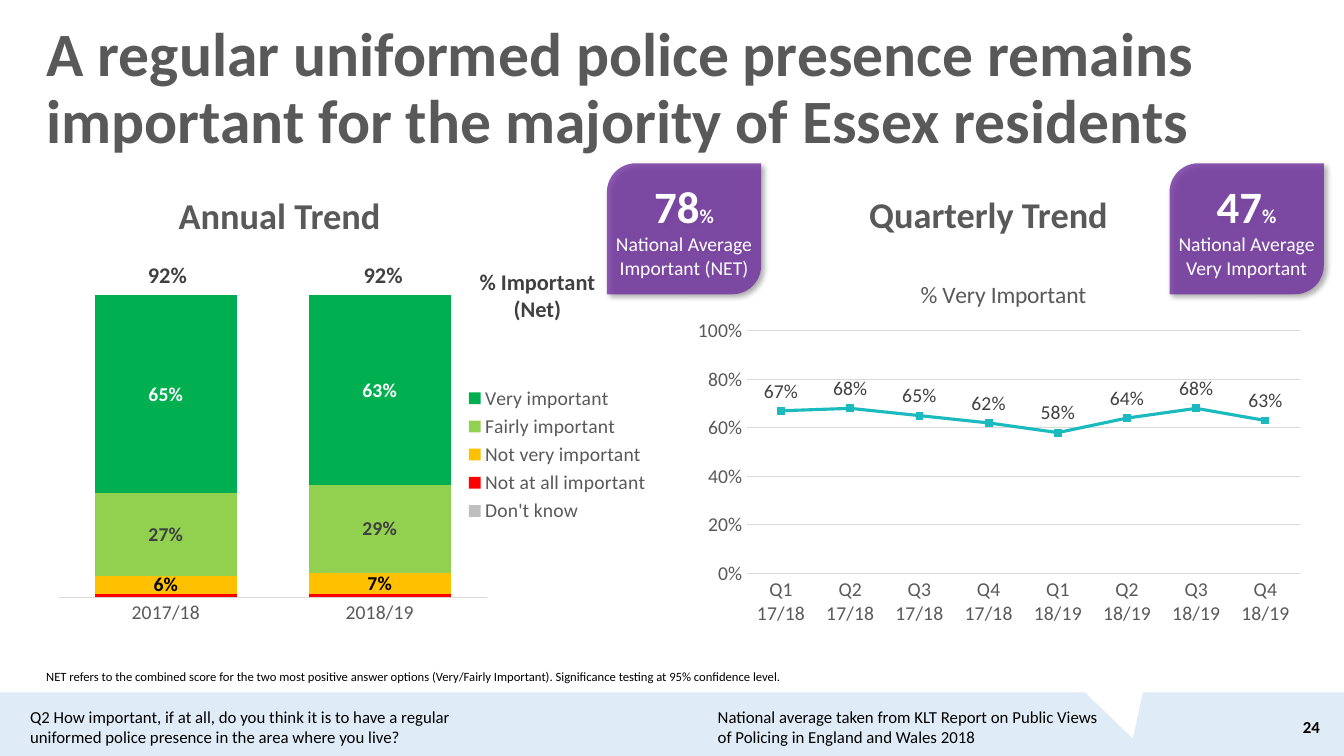
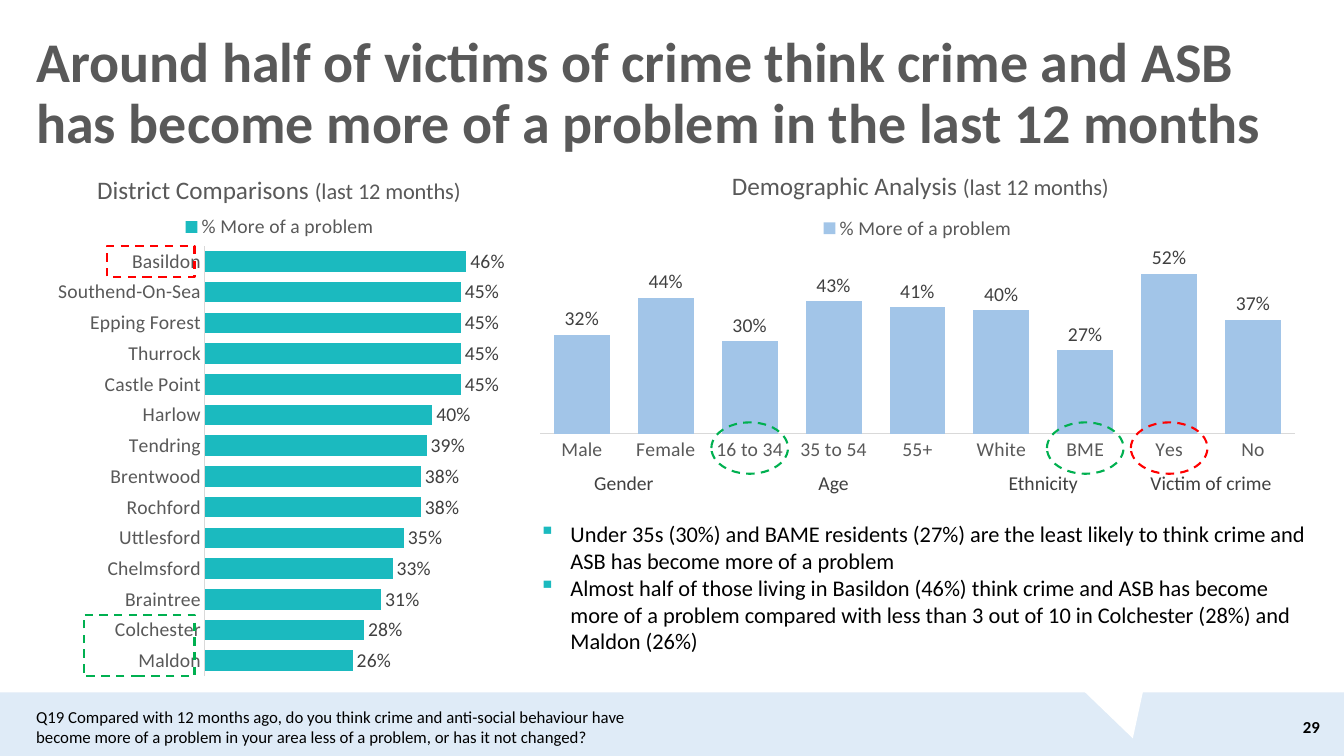
from lxml import etree
from pptx import Presentation
from pptx.chart.data import CategoryChartData
from pptx.dml.color import RGBColor
from pptx.enum.chart import XL_CHART_TYPE as CT, XL_LABEL_POSITION as LP
from pptx.enum.chart import XL_LEGEND_POSITION as LEG, XL_MARKER_STYLE as MARKER
from pptx.enum.chart import XL_TICK_MARK as TICK
from pptx.enum.dml import MSO_LINE
from pptx.enum.shapes import MSO_SHAPE as SHAPE
from pptx.enum.text import MSO_ANCHOR as ANCHOR, MSO_AUTO_SIZE as AUTO, PP_ALIGN as ALIGN
from pptx.oxml import parse_xml
from pptx.oxml.ns import nsdecls, qn
from pptx.util import Inches, Pt

FONT = "Calibri"
BLACK, WHITE, GREY, DARK, RULE = "000000", "FFFFFF", "595959", "404040", "D9D9D9"
TEAL, BLUE, BAND, PURPLE = "1BBABF", "A2C5E8", "DFEBF7", "7030A0"
RED, AMBER, LIME, GREEN, SILVER = "FF0000", "FFC000", "92D050", "00B050", "BFBFBF"
PLAIN_TABLE = "{2D5ABB26-0587-4C30-8999-92F81FD0307C}"


def rgb(color):
    return RGBColor.from_string(color)


def inches(box):
    return [Inches(v) for v in box]


def style(font, size, color=BLACK, bold=False):
    font.name, font.size, font.bold = FONT, Pt(size), bold
    font.color.rgb = rgb(color)


def add_text(s, box, lines, size, color=BLACK, bold=False, align=ALIGN.LEFT,
             anchor=ANCHOR.TOP, spacing=None, wrap=True):
    tf = s.shapes.add_textbox(*inches(box)).text_frame
    tf.word_wrap, tf.vertical_anchor = wrap, anchor
    for i, line in enumerate(lines):
        p = tf.add_paragraph() if i else tf.paragraphs[0]
        p.text, p.alignment, p.line_spacing = line, align, spacing
        style(p.font, size, color, bold)
    return tf


def add_shape(s, kind, box, fill=None, dash=None):
    sp = s.shapes.add_shape(kind, *inches(box))
    if fill:
        sp.fill.solid()
        sp.fill.fore_color.rgb = rgb(fill)
    else:
        sp.fill.background()
    if dash:
        sp.line.color.rgb = rgb(dash)
        sp.line.width, sp.line.dash_style = Pt(1.5), MSO_LINE.DASH
    else:
        sp.line.fill.background()
    sp.shadow.inherit = False
    return sp


def add_row(s, box, widths, texts, size, bold=False):
    frame = s.shapes.add_table(1, len(texts), *inches(box))
    frame.element.xpath(".//a:tableStyleId")[0].text = PLAIN_TABLE
    table = frame.table
    table.first_row = table.horz_banding = False
    for col, width in zip(table.columns, widths):
        col.width = Inches(width)
    for cell, text in zip(table.rows[0].cells, texts):
        cell.fill.background()
        cell.vertical_anchor = ANCHOR.MIDDLE
        p = cell.text_frame.paragraphs[0]
        p.text, p.alignment = text, ALIGN.CENTER
        style(p.font, size, DARK, bold)


def set_layout(parent, after, x, y, w=None, h=None, inner=False):
    for old in parent.findall(qn("c:layout")):
        parent.remove(old)
    layout = etree.Element(qn("c:layout"))
    manual = etree.SubElement(layout, qn("c:manualLayout"))
    values = [("layoutTarget", "inner")] if inner else []
    values += [("xMode", "edge"), ("yMode", "edge"), ("x", x), ("y", y), ("w", w), ("h", h)]
    for tag, value in values:
        if value is not None:
            etree.SubElement(manual, qn("c:" + tag)).set("val", str(value))
    if after is None:
        parent.insert(0, layout)
    else:
        parent.find(qn("c:" + after)).addnext(layout)


def add_chart(s, kind, box, cats, series, plot_box, label_pos, gap=None, overlap=None):
    data = CategoryChartData(number_format="0%")
    data.categories = cats
    for name, values, *_ in series:
        data.add_series(name, values)
    chart = s.shapes.add_chart(kind, *inches(box), data).chart
    style(chart.font, 14)
    chart.has_title = chart.has_legend = False
    plot, cat, val = chart.plots[0], chart.category_axis, chart.value_axis
    plot.vary_by_categories = False
    if gap is not None:
        plot.gap_width = gap
    if overlap is not None:
        plot.overlap = overlap
    style(cat.tick_labels.font, 14, GREY)
    cat.major_tick_mark = val.major_tick_mark = TICK.NONE
    cat.format.line.color.rgb = rgb(RULE)
    cat.format.line.width = Pt(0.75)
    val.minimum_scale, val.has_major_gridlines, val.visible = 0, False, False
    for ser, (_, _, color, label_color, bold) in zip(plot.series, series):
        if kind == CT.LINE_MARKERS:
            ser.smooth = False
            ser.format.line.color.rgb = rgb(color)
            ser.format.line.width = Pt(2.25)
            ser.marker.style, ser.marker.size = MARKER.SQUARE, 5
            fills = [ser.marker.format.fill, ser.marker.format.line.fill]
        else:
            ser.invert_if_negative = False
            fills = [ser.format.fill]
        for fill in fills:
            fill.solid()
            fill.fore_color.rgb = rgb(color)
        if label_color:
            labels = ser.data_labels
            labels.show_value, labels.position = True, label_pos
            labels.number_format, labels.number_format_is_linked = "0%", False
            style(labels.font, 14, label_color, bold)
    set_layout(chart.element.find(".//" + qn("c:plotArea")), None, *plot_box, inner=True)
    return chart


def add_chart_title(chart, runs, x, y):
    p = chart.chart_title.text_frame.paragraphs[0]
    for text, size in runs:
        r = p.add_run()
        r.text = text
        style(r.font, size, GREY)
    title = chart.element.find(".//" + qn("c:title"))
    set_layout(title, "tx", x, y)
    chart.chart_title.include_in_layout = False


def add_legend(chart, position, layout=None):
    chart.has_legend = True
    chart.legend.position, chart.legend.include_in_layout = position, False
    style(chart.legend.font, 14, GREY)
    if layout:
        set_layout(chart.element.find(".//" + qn("c:legend")), "legendPos", *layout)


def add_badge(s, box, number, caption):
    sp = add_shape(s, SHAPE.ROUND_2_DIAG_RECTANGLE, box, PURPLE)
    sp.adjustments[0], sp.adjustments[1] = 0.22, 0
    color = sp.element.spPr.find(qn("a:solidFill"))[0]
    etree.SubElement(color, qn("a:alpha")).set("val", "80000")
    sp.element.spPr.find(qn("a:effectLst")).append(parse_xml(
        f'<a:outerShdw {nsdecls("a")} blurRad="50800" dist="38100" dir="2700000" algn="tl" '
        'rotWithShape="0"><a:srgbClr val="000000"><a:alpha val="40000"/></a:srgbClr></a:outerShdw>'))
    tf = sp.text_frame
    tf.margin_left = tf.margin_right = tf.margin_top = tf.margin_bottom = 0
    tf.word_wrap, tf.vertical_anchor = True, ANCHOR.MIDDLE
    for i, line in enumerate([number, "National Average", caption]):
        p = tf.add_paragraph() if i else tf.paragraphs[0]
        p.alignment = ALIGN.CENTER
        style(p.font, 14, WHITE, i == 0)
        r = p.add_run()
        r.text = line
        if i == 0:
            r.font.size = Pt(32)
            p.add_run().text = "%"


def add_footer_band(s):
    band = add_shape(s, SHAPE.RECTANGLE, (0, 6.87, 13.33, 0.63), BAND)
    notch = add_shape(s, SHAPE.ISOSCELES_TRIANGLE, (10.75, 6.65, 0.77, 0.69), WHITE)
    notch.rotation = 163.1
    for i, sp in enumerate((band, notch)):
        s.slide_layout.shapes.element.insert(2 + i, sp.element)


def add_slide(prs, title, box, size, number, notes):
    s = prs.slides.add_slide(prs.slide_layouts[5])
    if len(prs.slides) == 1:
        add_footer_band(s)
    sp = s.shapes.title
    sp.left, sp.top, sp.width, sp.height = inches(box)
    tf = sp.text_frame
    tf.text = title
    tf.auto_size, tf.word_wrap, tf.vertical_anchor = AUTO.NONE, True, ANCHOR.MIDDLE
    p = tf.paragraphs[0]
    p.alignment, p.line_spacing = ALIGN.LEFT, 0.9
    style(p.font, size, GREY, True)
    add_text(s, (12.62, 7.01, 0.57, 0.4), [number], 12, bold=True,
             align=ALIGN.RIGHT, anchor=ANCHOR.MIDDLE)
    for x, width, note in notes:
        add_text(s, (x, 6.96, width, 0.5), [note], 12)
    return s


def annual_panel(s, x, y):
    add_text(s, (x + 0.42, y, 3.91, 0.77), ["Annual Trend"], 26, GREY, True,
             ALIGN.CENTER, ANCHOR.MIDDLE, 0.9)
    series = [("Don't know", (0, 0), SILVER, None, False),
              ("Not at all important", (0.01, 0.01), RED, None, False),
              ("Not very important", (0.06, 0.07), AMBER, BLACK, True),
              ("Fairly important", (0.27, 0.29), LIME, DARK, True),
              ("Very important", (0.65, 0.63), GREEN, WHITE, True)]
    chart = add_chart(s, CT.COLUMN_STACKED_100, (x, y + 0.65, 6.15, 4.16),
                      ("2017/18", "2018/19"), series, (0.03, 0.12, 0.69, 0.72),
                      LP.CENTER, 50, 100)
    add_legend(chart, LEG.RIGHT)
    add_row(s, (x + 0.19, y + 0.75, 4.28, 0.41), [2.14] * 2, ["92%"] * 2, 16, True)
    add_text(s, (x + 4.25, y + 0.83, 1.36, 0.64), ["% Important", "(Net)"], 16, DARK, True,
             ALIGN.CENTER, wrap=False)
    add_badge(s, (x + 5.62, y - 0.16, 1.53, 1.3), "78", "Important (NET)")


def quarterly_panel(s, x, y):
    add_text(s, (x, y, 6.13, 0.46), ["Quarterly Trend"], 25.9, GREY, True,
             ALIGN.CENTER, ANCHOR.MIDDLE, 0.8)
    quarters = [f"Q{q}\n{year}" for year in ("17/18", "18/19") for q in range(1, 5)]
    values = (0.67, 0.68, 0.65, 0.62, 0.58, 0.64, 0.68, 0.63)
    name = "% Very Important"
    chart = add_chart(s, CT.LINE_MARKERS, (x + 0.04, y + 0.6, 6.24, 3.76), quarters,
                      [(name, values, TEAL, DARK, False)], (0.1, 0.2, 0.88, 0.64), LP.ABOVE)
    add_chart_title(chart, [(name, 16.8)], 0.37, 0.05)
    val = chart.value_axis
    val.visible, val.maximum_scale, val.major_unit = True, 1, 0.2
    val.has_major_gridlines = True
    val.major_gridlines.format.line.color.rgb = rgb(RULE)
    val.major_gridlines.format.line.width = Pt(0.75)
    val.format.line.fill.background()
    val.tick_labels.number_format, val.tick_labels.number_format_is_linked = "0%", False
    style(val.tick_labels.font, 14, GREY)
    add_badge(s, (x + 4.86, y - 0.31, 1.53, 1.3), "47", "Very Important")


def district_panel(s, x, y, w, h):
    districts = {"Basildon": 0.46, "Southend-On-Sea": 0.45, "Epping Forest": 0.45,
                 "Thurrock": 0.45, "Castle Point": 0.45, "Harlow": 0.4, "Tendring": 0.39,
                 "Brentwood": 0.38, "Rochford": 0.38, "Uttlesford": 0.35, "Chelmsford": 0.33,
                 "Braintree": 0.31, "Colchester": 0.28, "Maldon": 0.26}
    chart = add_chart(s, CT.BAR_CLUSTERED, (x, y, w, h), list(districts),
                      [("% More of a problem", districts.values(), TEAL, DARK, False)],
                      (0.35, 0.18, 0.59, 0.79), LP.OUTSIDE_END, 50)
    chart.category_axis.reverse_order = True
    chart.value_axis.maximum_scale = 0.5
    add_chart_title(chart, [("District Comparisons ", 18), ("(last 12 months)", 16)], 0.12, 0.04)
    add_legend(chart, LEG.TOP, (0.29, 0.12, 0.43, 0.05))
    pitch = 0.79 * h / len(districts)
    for first, rows, left, color in ((0, 1, 0.7, RED), (12, 2, 0.47, GREEN)):
        add_shape(s, SHAPE.RECTANGLE,
                  (x + left, y + 0.18 * h + first * pitch, 1.57 - left, rows * pitch), dash=color)


def demographic_panel(s, x, y, w, h):
    people = {"Male": 0.32, "Female": 0.44, "16 to 34": 0.3, "35 to 54": 0.43, "55+": 0.41,
              "White": 0.4, "BME": 0.27, "Yes": 0.52, "No": 0.37}
    groups = {"Gender": 2, "Age": 3, "Ethnicity": 2, "Victim of crime": 2}
    chart = add_chart(s, CT.COLUMN_CLUSTERED, (x, y, w, h), list(people),
                      [("% More of a problem", people.values(), BLUE, DARK, False)],
                      (0.02, 0.31, 0.96, 0.58), LP.OUTSIDE_END, 50, -27)
    chart.value_axis.maximum_scale = 0.6
    add_chart_title(chart, [("Demographic Analysis ", 18), ("(last 12 months)", 16)], 0.26, 0.05)
    add_legend(chart, LEG.TOP, (0.37, 0.2, 0.26, 0.09))
    left, slot = x + 0.02 * w, 0.96 * w / len(people)
    add_row(s, (left, y + 3.11, 9 * slot, 0.39), [n * slot for n in groups.values()],
            list(groups), 14)
    for i, name in enumerate(people):
        if name in ("16 to 34", "BME", "Yes"):
            add_shape(s, SHAPE.OVAL, (left + (i + 0.5) * slot - 0.38, y + 2.7, 0.76, 0.51),
                      dash=RED if name == "Yes" else GREEN)


def findings(s, box, lines):
    for p in add_text(s, box, lines, 16).paragraphs:
        pPr = p._p.get_or_add_pPr()
        pPr.set("marL", str(Inches(0.31)))
        pPr.set("indent", str(-Inches(0.31)))
        for i, xml in enumerate((f'<a:buClr {nsdecls("a")}><a:srgbClr val="{TEAL}"/></a:buClr>',
                                 f'<a:buChar {nsdecls("a")} char="▪"/>')):
            pPr.insert(i, parse_xml(xml))


def main():
    prs = Presentation()
    prs.slide_width, prs.slide_height = Inches(13.33), Inches(7.5)
    s = add_slide(
        prs, "A regular uniformed police presence remains important for the majority of Essex residents",
        (0.36, 0.17, 12.63, 1.45), 44, "24",
        [(0.2, 4.41, "Q2 How important, if at all, do you think it is to have a regular uniformed police presence in the area where you live?"),
         (7.02, 4.02, "National average taken from KLT Report on Public Views of Policing in England and Wales 2018")])
    annual_panel(s, 0.4, 1.78)
    quarterly_panel(s, 6.74, 1.93)
    add_text(s, (0.36, 6.59, 7.55, 0.25), ["NET refers to the combined score for the two most positive answer options (Very/Fairly Important). Significance testing at 95% confidence level."], 9)
    s = add_slide(
        prs, "Around half of victims of crime think crime and ASB has become more of a problem in the last 12 months",
        (0.26, 0.17, 12.93, 1.54), 40, "29",
        [(0.26, 6.11, "Q19 Compared with 12 months ago, do you think crime and anti-social behaviour have become more of a problem in your area less of a problem, or has it not changed?")])
    demographic_panel(s, 5.2, 1.49, 7.8, 3.16)
    district_panel(s, 0.36, 1.47, 4.78, 5.4)
    findings(s, (5.25, 5.11, 7.94, 1.45), [
        "Under 35s (30%) and BAME residents (27%) are the least likely to think crime and ASB has become more of a problem",
        "Almost half of those living in Basildon (46%) think crime and ASB has become more of a problem compared with less than 3 out of 10 in Colchester (28%) and Maldon (26%)"])
    prs.save("out.pptx")


if __name__ == "__main__":
    main()
